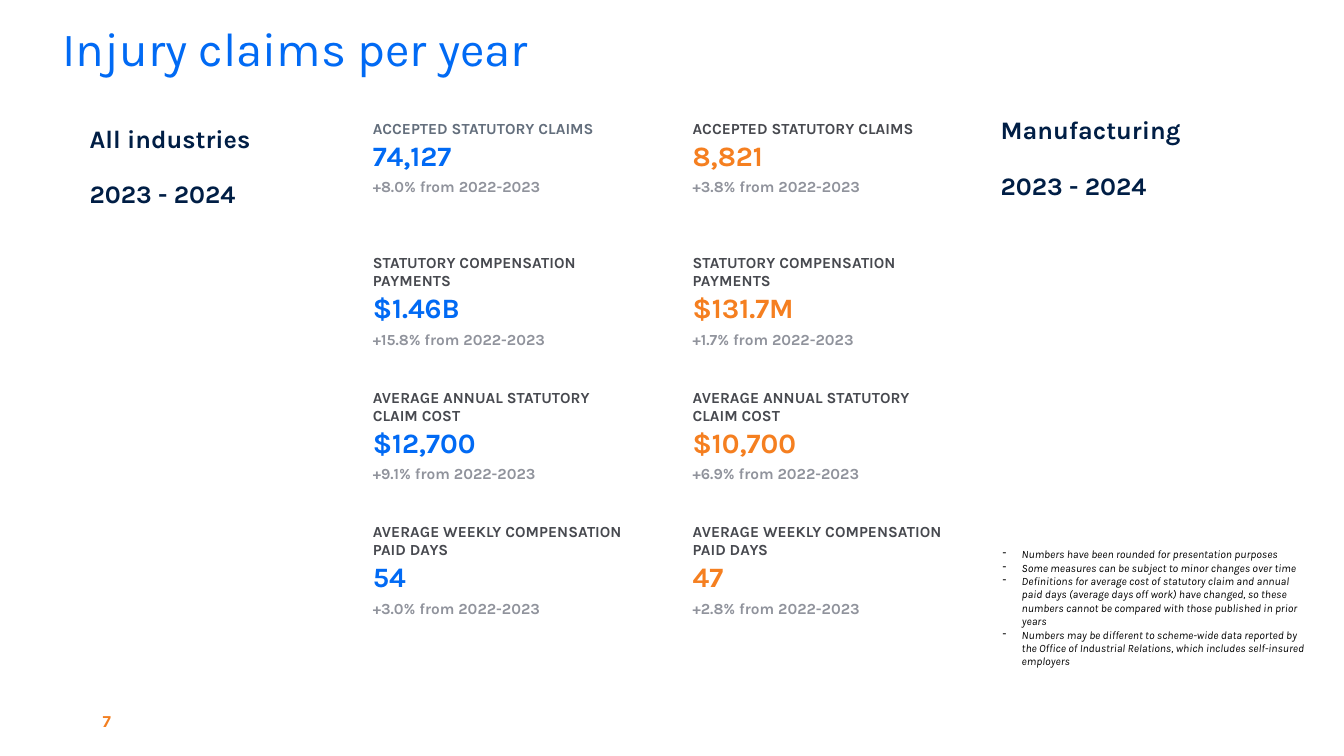
from lxml import etree
from pptx import Presentation
from pptx.dml.color import RGBColor
from pptx.enum.text import MSO_ANCHOR, MSO_AUTO_SIZE, PP_ALIGN
from pptx.oxml.ns import qn
from pptx.util import Cm, Pt

LEFT, MIDDLE, TOP = PP_ALIGN.LEFT, MSO_ANCHOR.MIDDLE, MSO_ANCHOR.TOP
NO_FIT = MSO_AUTO_SIZE.NONE
FONT = "Karla"
COLORS = {
    "blue": "016AF4",
    "orange": "F57F20",
    "navy": "001E45",
    "slate": "636E7C",
    "label": "47494F",
    "change": "90939C",
    "number": "F37F21",
    "black": "000000",
}


def write(tf, text, first=False, size=11, color="black", bold=False, italic=False,
          before=0, after=0, line=None, indent=0, bullet=None):
    """Write one paragraph; first=True uses the frame's existing one."""
    p = tf.paragraphs[0] if first else tf.add_paragraph()
    p.alignment = LEFT
    p.space_before = Pt(0 if first else before)
    p.space_after = Pt(after)
    if line:
        p.line_spacing = line
    pPr = p._p.get_or_add_pPr()
    pPr.set("marL", str(Cm(indent)))
    pPr.set("indent", str(-Cm(indent) if bullet else 0))
    if bullet:
        etree.SubElement(pPr, qn("a:buChar")).set("char", bullet)
    r = p.add_run()
    r.text = text
    r.font.name = FONT
    r.font.size = Pt(size)
    r.font.bold = bold
    r.font.italic = italic
    r.font.color.rgb = RGBColor.from_string(COLORS[color])


def add_box(left, top, width, height, anchor=TOP):
    tf = s.shapes.add_textbox(Cm(left), Cm(top), Cm(width), Cm(height)).text_frame
    tf.word_wrap = True
    tf.auto_size = NO_FIT
    tf.vertical_anchor = anchor
    return tf


prs = Presentation()
prs.slide_width, prs.slide_height = Cm(33.87), Cm(19.05)
s = prs.slides.add_slide(prs.slide_layouts[5])

# Title and slide number
title = s.shapes.title
title.left, title.top, title.width, title.height = Cm(1.32), Cm(0.43), Cm(22.05), Cm(1.7)
tf = title.text_frame
tf.word_wrap = True
tf.auto_size = NO_FIT
tf.vertical_anchor = MIDDLE
write(tf, "Injury claims per year", first=True, size=34, color="blue", line=0.9)
write(add_box(2.34, 17.65, 7.62, 1.02, MIDDLE), "7", first=True, size=12,
      color="number", bold=True)

# Column headings
for heading, box in [("All industries", (1.6, 2.9, 5.82, 3.28)),
                     ("Manufacturing", (24.56, 2.69, 7.92, 3.68))]:
    tf = add_box(*box)
    for i, text in enumerate([heading, "2023 - 2024"]):
        write(tf, text, first=i == 0, size=18, color="navy", bold=True,
              before=10, after=6, line=1.1, indent=0.41)

# Measures: one table for each group
MEASURES = [
    "ACCEPTED STATUTORY CLAIMS",
    "STATUTORY COMPENSATION PAYMENTS",
    "AVERAGE ANNUAL STATUTORY CLAIM COST",
    "AVERAGE WEEKLY COMPENSATION PAID DAYS",
]
GROUPS = [
    (9.14, "blue", "slate",
     [("74,127", "+8.0%"), ("$1.46B", "+15.8%"), ("$12,700", "+9.1%"), ("54", "+3.0%")]),
    (17.2, "orange", "label",
     [("8,821", "+3.8%"), ("$131.7M", "+1.7%"), ("$10,700", "+6.9%"), ("47", "+2.8%")]),
]
ROW_H = 3.39
for left, accent, first_label, results in GROUPS:
    table = s.shapes.add_table(len(MEASURES), 1, Cm(left), Cm(2.9), Cm(7.19),
                               Cm(ROW_H * len(MEASURES))).table
    table.first_row = table.horz_banding = False
    for i, (measure, (value, change)) in enumerate(zip(MEASURES, results)):
        table.rows[i].height = Cm(ROW_H)
        cell = table.cell(i, 0)
        cell.fill.background()
        tf = cell.text_frame
        write(tf, measure, first=True, bold=True, color="label" if i else first_label)
        write(tf, value, size=20, color=accent, bold=True, before=1.8, after=1.8)
        write(tf, f"{change} from 2022-2023", color="change", bold=True,
              before=1.8, after=1.8)

# Notes on the data
NOTES = [
    "Numbers have been rounded for presentation purposes",
    "Some measures can be subject to minor changes over time",
    "Definitions for average cost of statutory claim and annual paid days (average days "
    "off work) have changed, so these numbers cannot be compared with those published in "
    "prior years",
    "Numbers may be different to scheme-wide data reported by the Office of Industrial "
    "Relations, which includes self-insured employers",
]
tf = add_box(25.02, 13.67, 8.23, 3)
for i, note in enumerate(NOTES):
    write(tf, note, first=i == 0, size=8, italic=True, indent=0.48, bullet="-")

prs.save("out.pptx")
